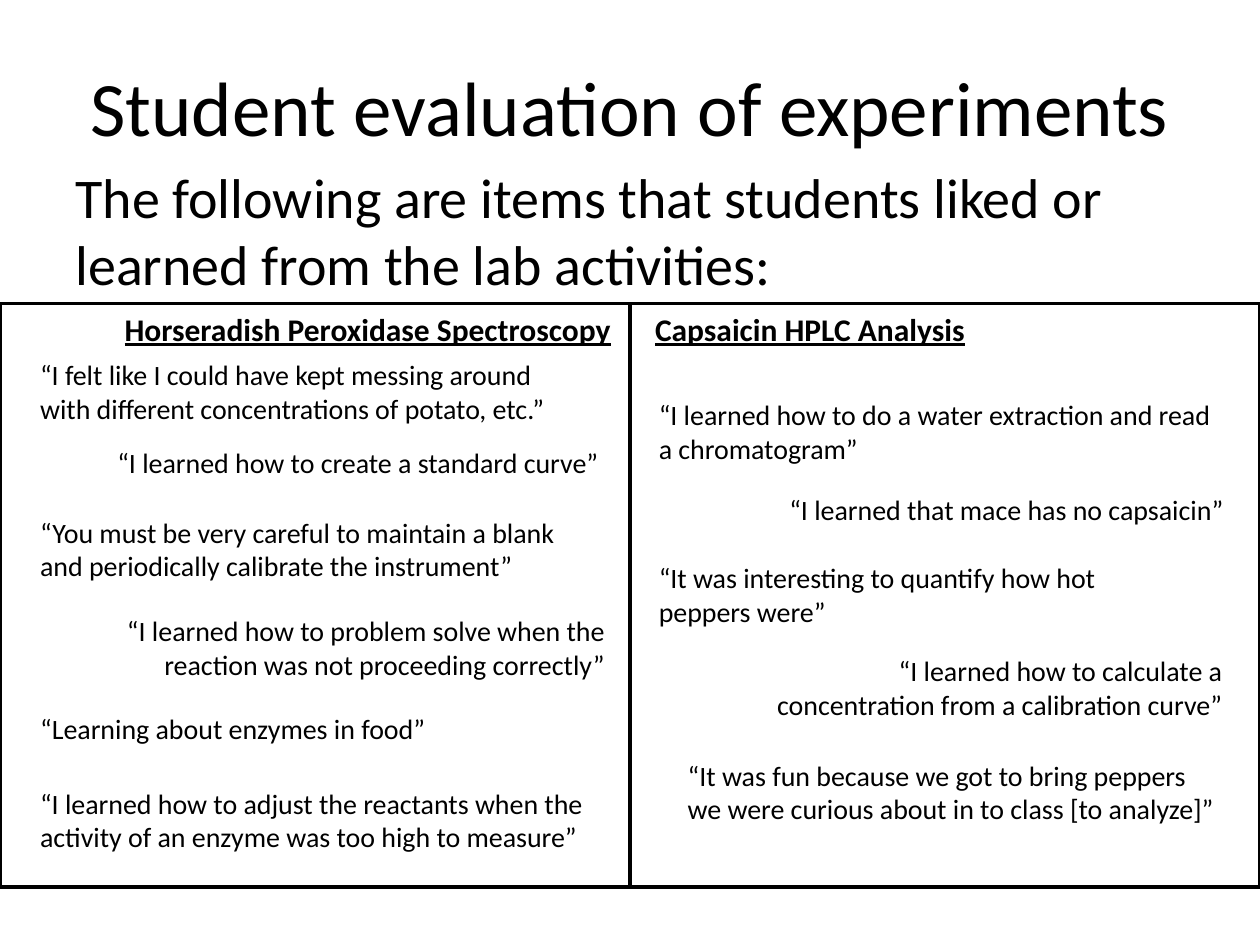
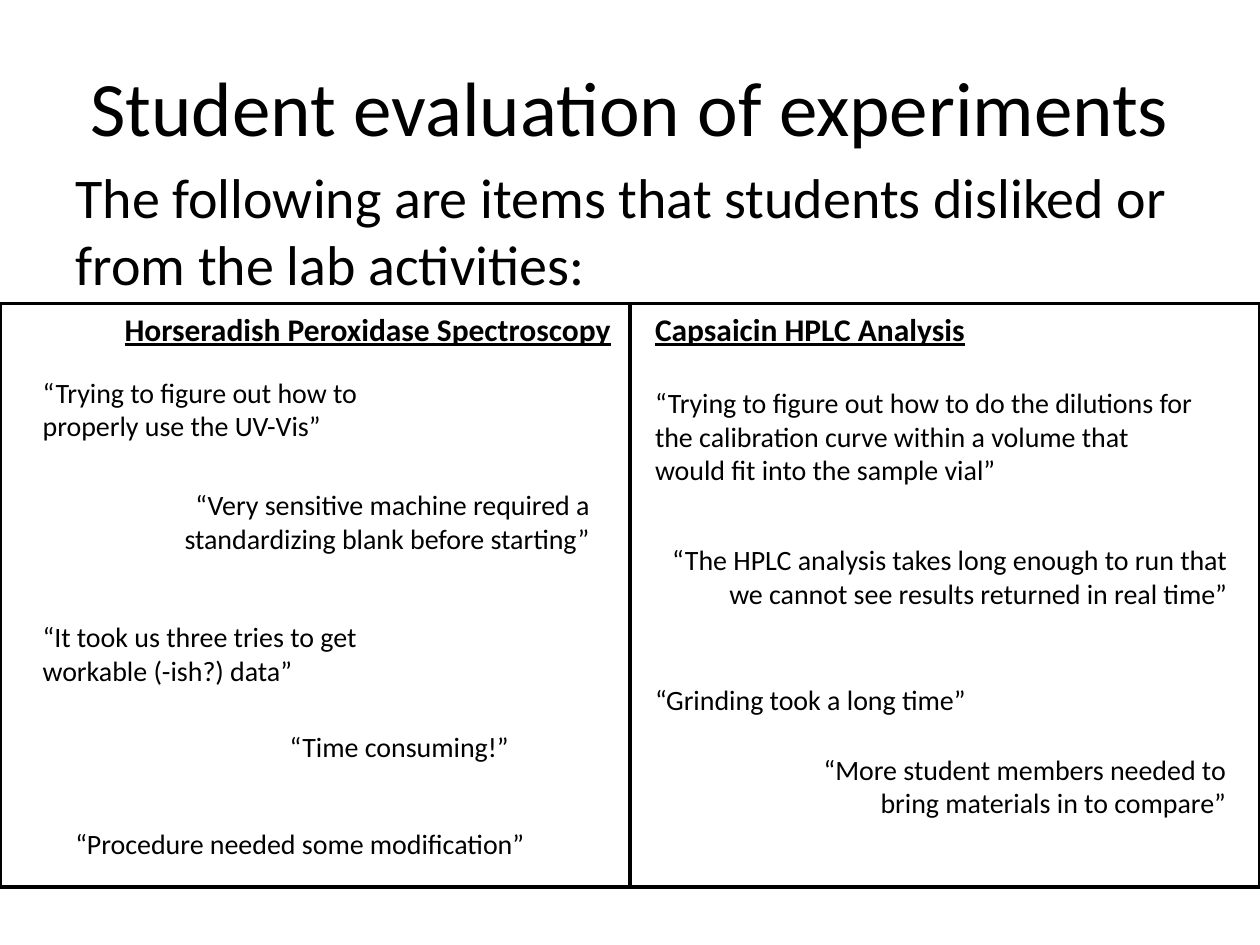
from pptx import Presentation
from pptx import util as u
from pptx.dml.color import RGBColor
from pptx.enum import shapes, text

PX = 9144  # EMU per px, 100 px to the inch
COLORS = {"ink": "000000", "paper": "FFFFFF"}
FONT = "Calibri"
LEFT, CENTER, RIGHT = text.PP_ALIGN.LEFT, text.PP_ALIGN.CENTER, text.PP_ALIGN.RIGHT
PANEL_TOP, PANEL_WIDTH, PANEL_HEIGHT = 241, 500, 463


class Deck:
    def __init__(self):
        self.prs = Presentation()
        self.prs.slide_width, self.prs.slide_height = 1000 * PX, 750 * PX
        self.slide = None

    def color(self, name):
        return RGBColor.from_string(COLORS[name])

    def new_slide(self):
        self.slide = self.prs.slides.add_slide(self.prs.slide_layouts[6])
        fill = self.slide.background.fill
        fill.solid()
        fill.fore_color.rgb = self.color("paper")

    def label(self, words, left, top, width, height, size, align=LEFT,
              anchor=text.MSO_ANCHOR.TOP, wrap=True, grow=False, heading=False):
        box = self.slide.shapes.add_textbox(left * PX, top * PX, width * PX, height * PX)
        frame = box.text_frame
        frame.text = words
        frame.word_wrap = wrap
        frame.vertical_anchor = anchor
        frame.auto_size = (text.MSO_AUTO_SIZE.SHAPE_TO_FIT_TEXT if grow
                           else text.MSO_AUTO_SIZE.NONE)
        paragraph = frame.paragraphs[0]
        paragraph.alignment = align
        font = paragraph.runs[0].font
        font.name, font.size = FONT, u.Pt(size)
        font.bold = font.underline = heading
        font.color.rgb = self.color("ink")

    def title(self, words):
        self.label(words, 50, 21, 900, 125, 44, CENTER, text.MSO_ANCHOR.MIDDLE)

    def intro(self, words):
        self.label(words, 50, 124, 900, 124, 32)

    def heading(self, words, left, width):
        self.label(words, left, PANEL_TOP, width, 40, 18,
                   wrap=False, grow=True, heading=True)

    def panel(self, left):
        panel = self.slide.shapes.add_shape(
            shapes.MSO_SHAPE.RECTANGLE, left * PX, PANEL_TOP * PX,
            PANEL_WIDTH * PX, PANEL_HEIGHT * PX)
        panel.shadow.inherit = False
        panel.fill.background()
        panel.line.color.rgb = self.color("ink")
        panel.line.width = u.Pt(2)

    def quote(self, words, left, top, width, lines=2, align=LEFT):
        self.label(f"“{words}”", left, top, width, 10 + 27 * lines, 16, align, grow=True)

    def evaluation(self, intro, quotes):
        self.new_slide()
        self.title("Student evaluation of experiments")
        self.intro(intro)
        # One bordered panel for each experiment
        self.heading("Horseradish Peroxidase Spectroscopy", 89, 413)
        self.panel(PANEL_WIDTH)
        self.heading("Capsaicin HPLC Analysis", 510, 269)
        self.panel(0)
        for quote in quotes:
            self.quote(*quote)


# Quotes: words, left, top, width, lines, alignment
LIKED = [
    # Horseradish peroxidase
    ("I felt like I could have kept messing around with different "
     "concentrations of potato, etc.", 22, 279, 443),
    ("I learned how to create a standard curve", 75, 349, 410, 1, RIGHT),
    ("You must be very careful to maintain a blank and periodically "
     "calibrate the instrument", 22, 404, 456),
    ("I learned how to problem solve when the reaction was not "
     "proceeding correctly", 55, 482, 435, 2, RIGHT),
    ("Learning about enzymes in food", 22, 560, 331, 1),
    ("I learned how to adjust the reactants when the activity of an "
     "enzyme was too high to measure", 22, 619, 463),
    # Capsaicin
    ("I learned how to do a water extraction and read a chromatogram", 513, 311, 472),
    ("I learned that mace has no capsaicin", 603, 386, 378, 1, RIGHT),
    ("It was interesting to quantify how hot peppers were", 513, 440, 381),
    ("I learned how to calculate a concentration from a calibration curve",
     578, 514, 402, 2, RIGHT),
    ("It was fun because we got to bring peppers we were curious about "
     "in to class [to analyze]", 536, 597, 445),
]
DISLIKED = [
    # Horseradish peroxidase
    ("Trying to figure out how to properly use the UV-Vis", 24, 293, 299),
    ("Very sensitive machine required a standardizing blank before starting",
     109, 382, 369, 2, RIGHT),
    ("It took us three tries to get workable (-ish?) data", 24, 487, 283),
    ("Time consuming!", 220, 574, 267, 1),
    ("Procedure needed some modification", 50, 651, 406, 1),
    # Capsaicin
    ("Trying to figure out how to do the dilutions for the calibration curve "
     "within a volume that would fit into the sample vial", 510, 301, 452, 3),
    ("The HPLC analysis takes long enough to run that we cannot see results "
     "returned in real time", 517, 426, 467, 2, RIGHT),
    ("Grinding took a long time", 510, 537, 275, 1),
    ("More student members needed to bring materials in to compare",
     602, 592, 381, 2, RIGHT),
]


def main():
    deck = Deck()
    deck.evaluation("The following are items that students liked or learned "
                    "from the lab activities:", LIKED)
    deck.evaluation("The following are items that students disliked or "
                    "from the lab activities:", DISLIKED)
    deck.prs.save("out.pptx")


if __name__ == "__main__":
    main()
